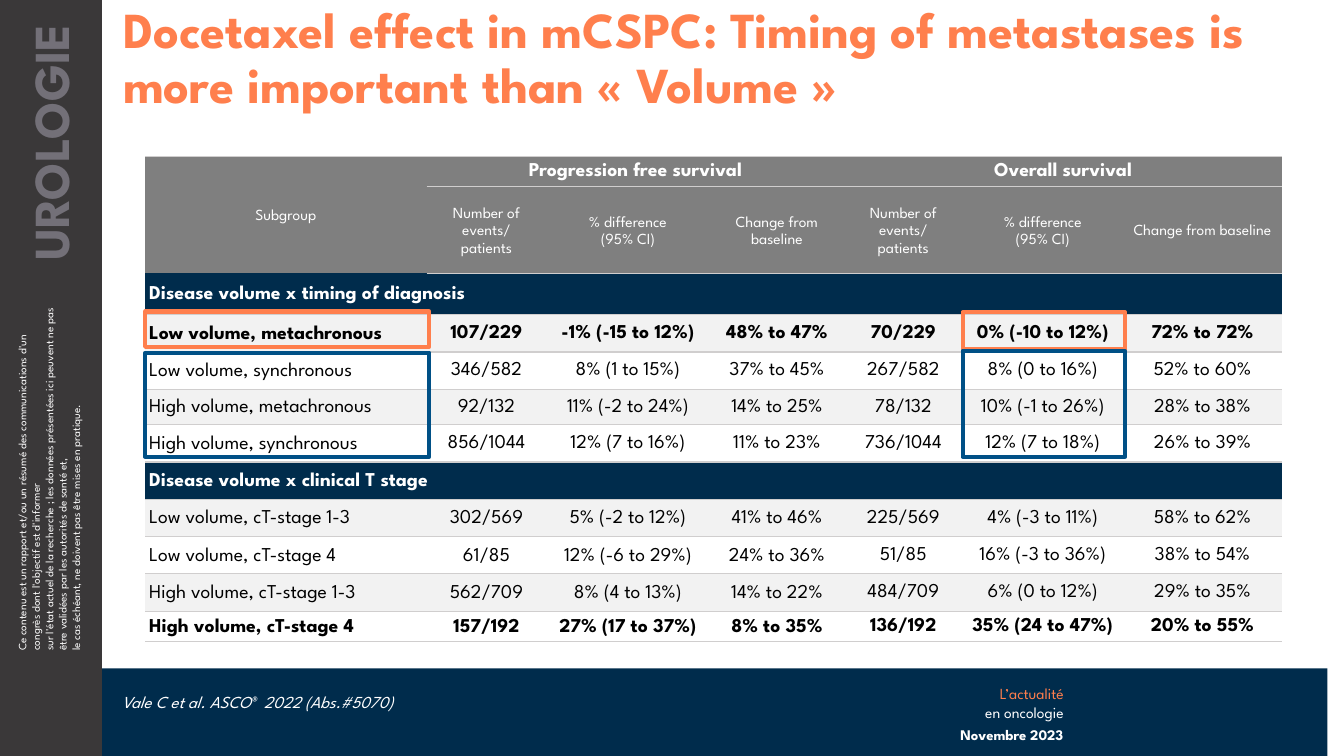
from dataclasses import dataclass

from lxml.etree import SubElement
from pptx import Presentation
from pptx.dml.color import RGBColor
from pptx.enum.shapes import MSO_SHAPE
from pptx.enum.text import MSO_ANCHOR, MSO_AUTO_SIZE, PP_ALIGN
from pptx.oxml.ns import qn
from pptx.util import Cm, Pt


@dataclass(frozen=True)
class Theme:
    font: str = "League Spartan"
    symbol_font: str = "Calibri"
    navy: str = "002C4C"
    blue: str = "005086"
    orange: str = "FF7F4D"
    charcoal: str = "3A3839"
    stone: str = "737078"
    header: str = "7F7F7F"
    band: str = "F2F2F2"
    rule: str = "D0CECE"
    white: str = "FFFFFF"
    black: str = "000000"
    title: float = 36
    body: float = 14
    citation: float = 12
    small: float = 11
    date: float = 10.5
    disclaimer: float = 8


theme = Theme()


def write(frame, *spans, size, color=theme.white, bold=False, italic=False,
          align=PP_ALIGN.LEFT, line=None, after=None):
    """Fill the first paragraph; a span is (text, format changes)."""
    para = frame.paragraphs[0]
    para.alignment = align
    para.line_spacing = line
    para.space_after = after
    for text, changes in spans:
        for index, piece in enumerate(text.split("\n")):
            if index:
                para.add_line_break()
                SubElement(para._p[-1], qn("a:rPr"), sz=str(int(size * 100)))
            if not piece:
                continue
            span = para.add_run()
            span.text = piece
            span.font.name = changes.get("font", theme.font)
            span.font.size = Pt(size)
            span.font.bold = bold
            span.font.italic = italic
            span.font.color.rgb = RGBColor.from_string(changes.get("color", color))


def add_rectangle(left, top, width, height, fill=None, outline=None):
    box = page.shapes.add_shape(MSO_SHAPE.RECTANGLE, Cm(left), Cm(top), Cm(width), Cm(height))
    box.shadow.inherit = False
    if fill:
        box.fill.solid()
        box.fill.fore_color.rgb = RGBColor.from_string(fill)
        box.line.fill.background()
    else:
        box.fill.background()
        box.line.color.rgb = RGBColor.from_string(outline)
        box.line.width = Pt(3)


deck = Presentation()
deck.slide_width, deck.slide_height = Cm(33.87), Cm(19.05)
page = deck.slides.add_slide(deck.slide_layouts[5])

# Footer bar and sidebar
add_rectangle(2.16, 16.84, 31.29, 2.21, fill=theme.navy)
add_rectangle(0, 0, 2.57, 19.05, fill=theme.charcoal)

# Title
title = page.shapes.title
title.left, title.top, title.width, title.height = Cm(2.59), Cm(0), Cm(31.27), Cm(1.45)
title.text_frame.auto_size = MSO_AUTO_SIZE.NONE
title.text_frame.vertical_anchor = MSO_ANCHOR.TOP
title.text_frame.margin_left = Cm(0.51)
write(title.text_frame,
      ("Docetaxel effect in mCSPC: Timing of metastases is more important than « Volume »", {}),
      size=theme.title, color=theme.orange, bold=True, line=0.9)

# Sidebar and footer texts: place, rotation, right margin, anchor, spans, format
disclaimer = (
    "Ce contenu est un rapport et/ou un résumé des communications d'un congrès "
    "dont l'objectif est d'informer\n"
    "sur l'état actuel de la recherche ; les données présentées ici peuvent ne pas "
    "être validées par les autorités de santé et,\n"
    "le cas échéant, ne doivent pas être mises en pratique.")
labels = [
    ((-3.33, 11.1, 9.14, 1.96), 270, 0.25, MSO_ANCHOR.TOP,
     [(disclaimer, {})], dict(size=theme.disclaimer)),
    ((-2.64, 3, 7.8, 1.8), 270, 0.61, MSO_ANCHOR.TOP,
     [("UROLOGIE", {})],
     dict(size=theme.title, color=theme.stone, bold=True, align=PP_ALIGN.RIGHT)),
    ((22.89, 17.12, 4.17, 1.19), 0, 0.25, MSO_ANCHOR.TOP,
     [("L’actualité\n", {"color": theme.orange}), ("en oncologie", {})],
     dict(size=theme.small, align=PP_ALIGN.RIGHT)),
    ((22.89, 18.21, 3.91, 0.69), 0, 0, MSO_ANCHOR.TOP,
     [("Novembre 2023", {})],
     dict(size=theme.date, bold=True, align=PP_ALIGN.RIGHT, line=0.9)),
    ((2.82, 16.84, 14.33, 1.75), 0, 0.25, MSO_ANCHOR.MIDDLE,
     [("Vale C et al. ASCO", {}), ("®", {"font": theme.symbol_font}),
      (" 2022 (Abs.#5070)", {})],
     dict(size=theme.citation, italic=True, line=0.9)),
]
for place, rotation, right_margin, anchor, spans, text_format in labels:
    box = page.shapes.add_textbox(*map(Cm, place))
    box.rotation = rotation
    box.text_frame.word_wrap = True
    box.text_frame.margin_right = Cm(right_margin)
    box.text_frame.vertical_anchor = anchor
    write(box.text_frame, *spans, **text_format)

# Table contents
events, difference, change = ("Number of\nevents/\npatients", "% difference\n(95% CI)",
                              "Change from baseline")
rows = [
    ["Subgroup", "Progression free survival", "", "", "Overall survival", "", ""],
    ["", events, difference, change, events, difference, change],
    ["Disease volume x timing of diagnosis"],
    ["Low volume, metachronous", "107/229", "-1% (-15 to 12%)", "48% to 47%",
     "70/229", "0% (-10 to 12%)", "72% to 72%"],
    ["Low volume, synchronous", "346/582", "8% (1 to 15%)", "37% to 45%",
     "267/582", "8% (0 to 16%)", "52% to 60%"],
    ["High volume, metachronous", "92/132", "11% (-2 to 24%)", "14% to 25%",
     "78/132", "10% (-1 to 26%)", "28% to 38%"],
    ["High volume, synchronous", "856/1044", "12% (7 to 16%)", "11% to 23%",
     "736/1044", "12% (7 to 18%)", "26% to 39%"],
    ["Disease volume x clinical T stage"],
    ["Low volume, cT-stage 1-3", "302/569", "5% (-2 to 12%)", "41% to 46%",
     "225/569", "4% (-3 to 11%)", "58% to 62%"],
    ["Low volume, cT-stage 4", "61/85", "12% (-6 to 29%)", "24% to 36%",
     "51/85", "16% (-3 to 36%)", "38% to 54%"],
    ["High volume, cT-stage 1-3", "562/709", "8% (4 to 13%)", "14% to 22%",
     "484/709", "6% (0 to 12%)", "29% to 35%"],
    ["High volume, cT-stage 4", "157/192", "27% (17 to 37%)", "8% to 35%",
     "136/192", "35% (24 to 47%)", "20% to 55%"],
]
section_rows, bold_rows = (2, 7), (3, 11)
widths = [7.09, 3.02, 4.11, 3.4, 2.97, 4.06, 3.99]
heights = [0.76, 2.19, 1.04, 0.94, 0.94, 0.89, 0.94, 0.94, 0.94, 0.94, 0.94, 0.76]

# Table grid, without a built-in style
table = page.shapes.add_table(len(rows), len(widths), Cm(3.66), Cm(3.94),
                              Cm(sum(widths)), Cm(sum(heights))).table
table.first_row = table.horz_banding = False
table._tbl.tblPr[0].text = "{2D5ABB26-0587-4C30-8999-92F81FD0307C}"
for column, width in zip(table.columns, widths):
    column.width = Cm(width)
for row, height in zip(table.rows, heights):
    row.height = Cm(height)
merges = [(0, 0, 1, 0), (0, 1, 0, 3), (0, 4, 0, 6)] + [(r, 0, r, 6) for r in section_rows]
for top, left, bottom, right in merges:
    table.cell(top, left).merge(table.cell(bottom, right))

# Table cells
for r, texts in enumerate(rows):
    is_header, is_section = r < 2, r in section_rows
    first_band = 3 if r < 7 else 8
    for c in range(len(widths)):
        cell = table.cell(r, c)
        cell.margin_left = cell.margin_right = Cm(0.1)
        cell.margin_top, cell.margin_bottom = Cm(0.03), Cm(0)
        cell.vertical_anchor = MSO_ANCHOR.MIDDLE

        # Rules come before the fill in the cell properties
        sides = ["a:lnT"] if r == 0 else []
        if (r, c) != (0, 0):
            sides.append("a:lnB")
        for side in sides:
            rule = SubElement(cell._tc.get_or_add_tcPr(), qn(side), w=str(Pt(1)))
            SubElement(SubElement(rule, qn("a:solidFill")), qn("a:srgbClr"), val=theme.rule)
        cell.fill.solid()
        cell.fill.fore_color.rgb = RGBColor.from_string(
            theme.header if is_header else theme.navy if is_section
            else theme.white if (r - first_band) % 2 else theme.band)

        if c >= len(texts) or not texts[c]:
            continue
        is_group = r == 0 and c > 0
        is_loose = not is_header and (c == 0 or (r > 7 and c < 4))
        write(cell.text_frame, (texts[c], {}),
              size=theme.small if is_header and not is_group else theme.body,
              color=theme.white if is_header or is_section else theme.black,
              bold=is_group or is_section or r in bold_rows,
              align=PP_ALIGN.CENTER if is_header or c else PP_ALIGN.LEFT,
              line=1.07 if is_loose else Pt(12.4) if is_header and not is_group else None,
              after=Pt(8) if is_loose else None)

# Highlight frames
for left, top, width, height, outline in [
    (3.66, 8.89, 7.16, 2.62, theme.blue),
    (3.66, 7.85, 7.16, 0.89, theme.orange),
    (24.26, 7.87, 4.09, 0.94, theme.orange),
    (24.26, 8.84, 4.09, 2.67, theme.blue),
]:
    add_rectangle(left, top, width, height, outline=outline)

deck.save("out.pptx")
